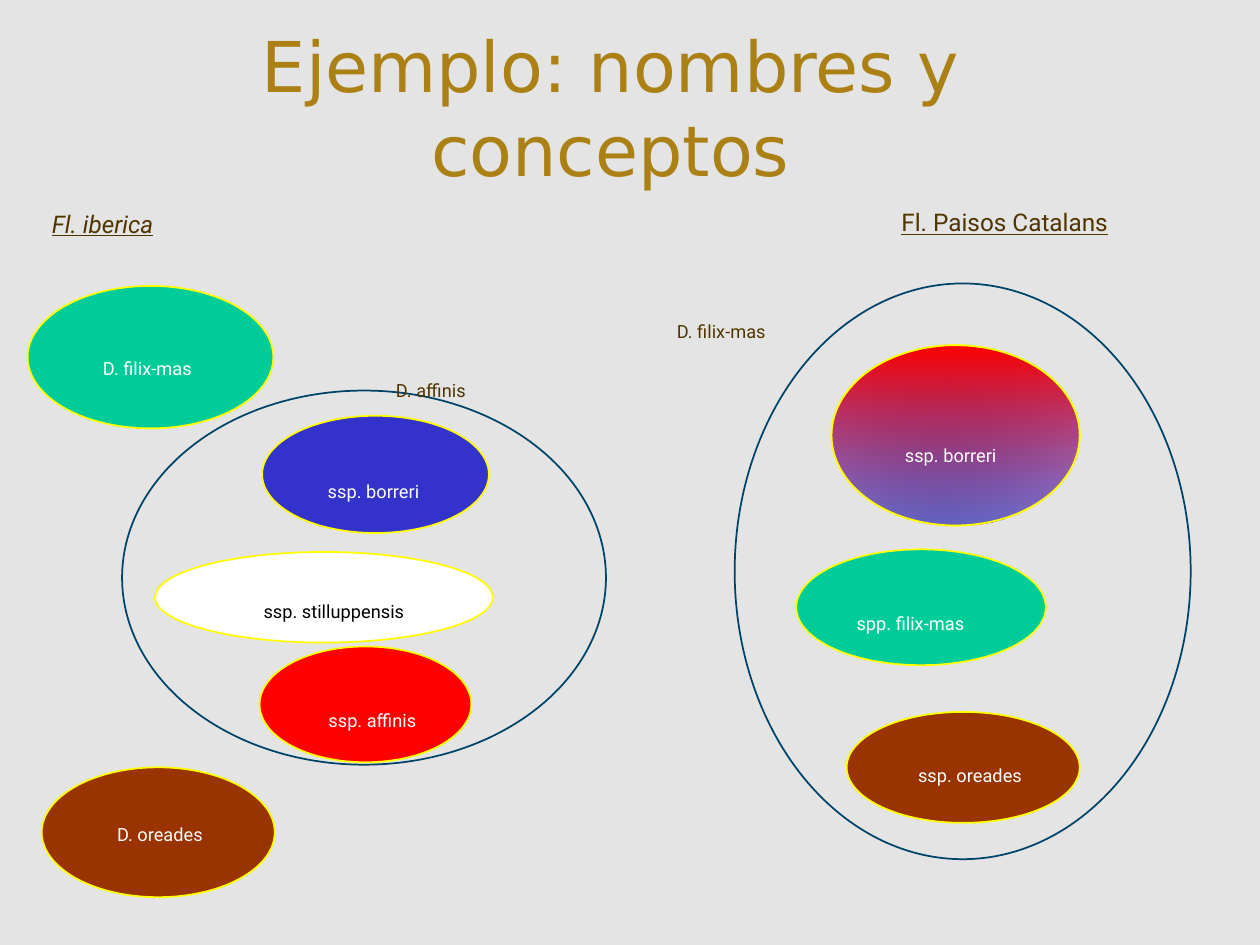
"""Build a slide comparing fern names and concepts in two floras."""
from pptx import Presentation
from pptx.dml.color import RGBColor
from pptx.enum.shapes import MSO_SHAPE as Preset
from pptx.enum.text import MSO_ANCHOR as Anchor, MSO_AUTO_SIZE as AutoSize, PP_ALIGN as Align
from pptx.oxml.ns import qn
from pptx.oxml.xmlchemy import OxmlElement
from pptx.util import Pt

PAPER = RGBColor(0xE4, 0xE4, 0xE4)
NAVY = RGBColor(0x00, 0x43, 0x68)
YELLOW = RGBColor(0xFF, 0xFF, 0x00)
RUST = RGBColor(0x99, 0x33, 0x00)
GREEN = RGBColor(0x00, 0xCC, 0x99)
BLUE = RGBColor(0x33, 0x33, 0xCC)
RED = RGBColor(0xFF, 0x00, 0x00)
WHITE = RGBColor(0xFF, 0xFF, 0xFF)
BLACK = RGBColor(0x00, 0x00, 0x00)
BROWN = RGBColor(0x50, 0x35, 0x00)
GOLD = RGBColor(0xAB, 0x80, 0x15)

CLEAR_TO_WHITE = {"angle": 0, "stops": [(BLACK, 0), (WHITE, 100)]}
RED_TO_BLUE = {"angle": 270, "stops": [(RED, 100), (BLUE, 61)]}
BORRERI = (475.2, 197.3, 141.8, 103)

ELLIPSES = [
    ((69.8, 223.2, 276.5, 213.8), None),
    ((23.8, 438.5, 133.2, 74.2), RUST),
    ((455, 313.9, 142.6, 66.2), GREEN),
    ((483.8, 406.8, 133.2, 63.4), RUST),
    ((419.8, 162, 260.6, 329), None),
    ((149.8, 237.6, 129.6, 67), BLUE),
    ((88.6, 315.4, 193, 51.8), WHITE),
    (BORRERI, CLEAR_TO_WHITE),
    (BORRERI, RED_TO_BLUE),
    ((148.3, 369.4, 121, 66.2), RED),
    ((15.8, 163.4, 140.4, 81.4), GREEN),
]

LABELS = [
    ("ssp. affinis", (157, 390.2, 111.6, 28.8), WHITE),
    ("D. affinis", (215.3, 201.6, 61.9, 20.2), BROWN),
    ("D. filix-mas", (25.2, 188.6, 118.1, 28.8), WHITE),
    ("spp. filix-mas", (452.2, 334.8, 136.1, 28.8), WHITE),
    ("D. filix-mas", (375.1, 167.8, 74.2, 20.2), BROWN),
    ("D. oreades", (36, 455, 110.9, 28.8), WHITE),
    ("ssp. oreades", (491, 421.2, 126.7, 28.8), WHITE),
    ("ssp. stilluppensis", (106.6, 327.6, 168.5, 28.8), BLACK),
    ("ssp. borreri", (154.8, 259.2, 117.4, 28.8), WHITE),
    ("ssp. borreri", (484.6, 238.3, 117.4, 28.8), WHITE),
]

HEADINGS = [
    ("Fl. iberica", (17.3, 100.1, 82.8, 24.5), True),
    ("Fl. Paisos Catalans", (501.1, 99.4, 146.2, 24.5), False),
]


def add_ellipse(page, place, fill):
    oval = page.shapes.add_shape(Preset.OVAL, *map(Pt, place))
    oval.shadow.inherit = False
    if fill is None:
        oval.fill.background()
    elif isinstance(fill, dict):
        oval.fill.gradient()
        oval.fill.gradient_angle = fill["angle"]
        for stop, (color, _) in zip(oval.fill.gradient_stops, fill["stops"]):
            stop.color.rgb = color
        tags = oval._element.spPr.iter(qn("a:srgbClr"))
        for tag, (_, opacity) in zip(list(tags), fill["stops"]):
            alpha = OxmlElement("a:alpha")
            alpha.set("val", str(opacity * 1000))
            tag.append(alpha)
    else:
        oval.fill.solid()
        oval.fill.fore_color.rgb = fill
    oval.line.color.rgb = NAVY if fill is None else YELLOW
    oval.line.width = Pt(1)


def add_text(page, text, place, *, color, size=18, font="Roboto", italic=False,
             underline=False, lowered=True, wrap=False, spacing=0.9, anchor=Anchor.TOP):
    box = page.shapes.add_textbox(*map(Pt, place))
    frame = box.text_frame
    frame.word_wrap = wrap
    frame.auto_size = AutoSize.NONE if wrap else AutoSize.SHAPE_TO_FIT_TEXT
    frame.vertical_anchor = anchor
    para = frame.paragraphs[0]
    para.alignment = Align.CENTER
    para.line_spacing = spacing
    span = para.add_run()
    span.text = text
    span.font.name = font
    span.font.size = Pt(size)
    span.font.color.rgb = color
    span.font.italic = italic
    span.font.underline = underline
    if lowered:
        span.font._element.set("baseline", "-25000")


def main():
    deck = Presentation()
    deck.slide_width, deck.slide_height = Pt(720), Pt(540)
    page = deck.slides.add_slide(deck.slide_layouts[6])
    page.background.fill.solid()
    page.background.fill.fore_color.rgb = PAPER
    for place, fill in ELLIPSES:
        add_ellipse(page, place, fill)
    for text, place, color in LABELS:
        add_text(page, text, place, color=color)
    for text, place, italic in HEADINGS:
        add_text(page, text, place, color=BROWN, size=24, italic=italic, underline=True)
    add_text(page, "Ejemplo: nombres y conceptos", (71.3, -0.7, 555.1, 123.1), color=GOLD,
             size=40, font="DejaVu Sans", lowered=False, wrap=True, spacing=1.0,
             anchor=Anchor.MIDDLE)
    deck.save("out.pptx")


if __name__ == "__main__":
    main()
